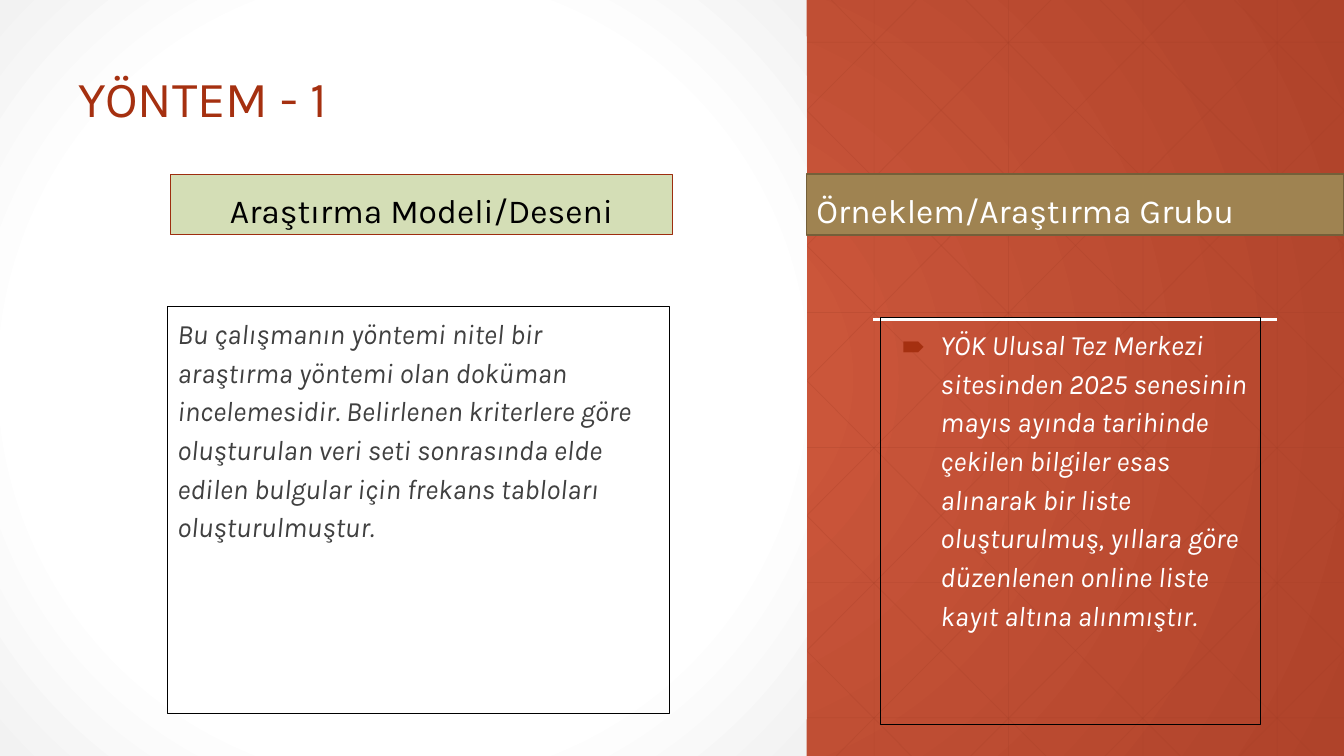
from dataclasses import dataclass

from lxml.etree import SubElement
from pptx import Presentation
from pptx.dml.color import RGBColor
from pptx.enum.shapes import MSO_CONNECTOR as Connector, MSO_SHAPE as Shape
from pptx.enum.text import MSO_ANCHOR as Anchor, MSO_AUTO_SIZE as AutoSize, PP_ALIGN as Align
from pptx.oxml import parse_xml
from pptx.oxml.ns import nsdecls, qn
from pptx.util import Inches, Pt

WIDTH, HEIGHT = 13.33, 7.5
PANEL_WIDTH = 8
GRID_STEP = 1.333
DIAGONAL_RUN = 7.46


@dataclass(frozen=True)
class Theme:
    font: str = "Karla"
    bullet_font: str = "Noto Sans Symbols"
    title_size: float = 36
    heading_size: float = 24
    body_size: float = 20
    accent: str = "A53010"
    grid: str = "A43F27"
    white: str = "FFFFFF"
    black: str = "000000"
    body: str = "404040"
    green: str = "D4DEB6"
    green_edge: str = "9D2D0F"
    olive: str = "9F8351"
    olive_edge: str = "745F39"
    backdrop: tuple = ((0, "D15A3E"), (100, "AF432A"))
    panel: tuple = ((0, "FFFFFF"), (69, "FFFFFF"), (100, "F2F2F2"))


THEME = Theme()


@dataclass(frozen=True)
class Card:
    text: str
    box: tuple[float, float, float, float]
    color: str
    edge: str = THEME.black
    edge_width: float = 0.75
    fill: str | None = None
    size: float = THEME.body_size
    align: Align = Align.LEFT
    anchor: Anchor = Anchor.TOP
    italic: bool = False
    spacing: float = 1.0
    after: float = 0
    bullet: str | None = None


CARDS = (
    Card("Araştırma Modeli/Deseni", (1.69, 1.73, 4.98, 0.6), THEME.black,
         edge=THEME.green_edge, fill=THEME.green, size=THEME.heading_size,
         align=Align.CENTER, anchor=Anchor.BOTTOM),
    Card("Örneklem/Araştırma Grubu", (8, 1.73, 5.33, 0.6), THEME.white,
         edge=THEME.olive_edge, edge_width=1.25, fill=THEME.olive,
         size=THEME.heading_size, anchor=Anchor.BOTTOM),
    Card("YÖK Ulusal Tez Merkezi sitesinden 2025 senesinin mayıs ayında tarihinde "
         "çekilen bilgiler esas alınarak bir liste oluşturulmuş, yıllara göre "
         "düzenlenen online liste kayıt altına alınmıştır.",
         (8.73, 3.15, 3.77, 4.04), THEME.white, italic=True, spacing=1.15, bullet="🠶"),
    Card("Bu çalışmanın yöntemi nitel bir araştırma yöntemi olan doküman "
         "incelemesidir. Belirlenen kriterlere göre oluşturulan veri seti sonrasında "
         "elde edilen bulgular için frekans tabloları oluşturulmuştur.",
         (1.66, 3.04, 4.98, 4.04), THEME.body, italic=True, spacing=1.15, after=12),
)


def rgb(color: str) -> RGBColor:
    return RGBColor.from_string(color)


def apply_radial(properties, stops: tuple) -> None:
    marks = "".join(f'<a:gs pos="{position * 1000}"><a:srgbClr val="{color}"/></a:gs>'
                    for position, color in stops)
    gradient = parse_xml(
        f'<a:gradFill {nsdecls("a")} rotWithShape="1"><a:gsLst>{marks}</a:gsLst>'
        '<a:path path="circle"><a:fillToRect l="50000" t="50000" r="50000" b="50000"/>'
        '</a:path></a:gradFill>')
    solid = properties.find(qn("a:solidFill"))
    properties.replace(solid, gradient)


def add_line(slide, start: tuple, end: tuple, color: str, width: float,
             opacity: int = 100) -> None:
    line = slide.shapes.add_connector(
        Connector.STRAIGHT, *(Inches(value) for value in (*start, *end)))
    line.line.color.rgb = rgb(color)
    line.line.width = Pt(width)
    properties = line._element.spPr
    if opacity < 100:
        SubElement(properties.find(".//" + qn("a:srgbClr")), qn("a:alpha"),
                   val=str(opacity * 1000))
    SubElement(properties, qn("a:effectLst"))


def add_rectangle(slide, box: tuple):
    rectangle = slide.shapes.add_shape(Shape.RECTANGLE, *(Inches(value) for value in box))
    rectangle.shadow.inherit = False
    return rectangle


def write_text(shape, text: str, *, size: float, color: str, align: Align = Align.LEFT,
               anchor: Anchor = Anchor.TOP, italic: bool = False, spacing: float = 1.0,
               after: float = 0, bullet: str | None = None) -> None:
    frame = shape.text_frame
    frame.word_wrap = True
    frame.vertical_anchor = anchor
    frame.margin_left = frame.margin_right = Inches(0.1)
    frame.margin_top = frame.margin_bottom = Inches(0.05)
    frame.text = text
    paragraph = frame.paragraphs[0]
    paragraph.alignment = align
    paragraph.line_spacing = spacing
    paragraph.space_before = Pt(0)
    paragraph.space_after = Pt(after)
    if bullet:
        properties = paragraph._p.get_or_add_pPr()
        properties.set("marL", str(Inches(0.5)))
        properties.set("indent", str(Inches(-0.39)))
        bullet_color = SubElement(properties, qn("a:buClr"))
        SubElement(bullet_color, qn("a:srgbClr"), val=THEME.accent)
        SubElement(properties, qn("a:buFont"), typeface=THEME.bullet_font)
        SubElement(properties, qn("a:buChar"), char=bullet)
    font = paragraph.runs[0].font
    font.name = THEME.font
    font.size = Pt(size)
    font.italic = italic
    font.color.rgb = rgb(color)


def add_grid(slide) -> None:
    verticals = [8.67 + GRID_STEP * i for i in range(4)]
    horizontals = [0.42 + 1.34 * i for i in range(6)]
    segments = [((x, 0), (x, HEIGHT)) for x in verticals]
    segments += [((0, y), (WIDTH, y)) for y in horizontals]
    for first, falling in ((1.58, True), (1.63, False)):
        for i in range(9):
            x = first + GRID_STEP * i
            run = min(DIAGONAL_RUN, WIDTH - x)
            rise = HEIGHT * run / DIAGONAL_RUN
            start_y, end_y = (0, rise) if falling else (HEIGHT, HEIGHT - rise)
            segments.append(((x, start_y), (x + run, end_y)))
    for start, end in segments:
        add_line(slide, start, end, THEME.grid, 0.5, opacity=25)


def add_panel(slide) -> None:
    panel = add_rectangle(slide, (0, 0, PANEL_WIDTH, HEIGHT))
    panel.fill.solid()
    panel.line.fill.background()
    apply_radial(panel._element.spPr, THEME.panel)


def place_title(slide) -> None:
    title = slide.shapes.title
    title.left, title.top = Inches(0.68), Inches(0.62)
    title.width, title.height = Inches(6.16), Inches(0.7)
    write_text(title, "YÖNTEM - 1", size=THEME.title_size, color=THEME.accent)
    title.text_frame.auto_size = AutoSize.SHAPE_TO_FIT_TEXT
    slide.shapes._spTree.append(title._element)


def add_card(slide, card: Card) -> None:
    rectangle = add_rectangle(slide, card.box)
    if card.fill:
        rectangle.fill.solid()
        rectangle.fill.fore_color.rgb = rgb(card.fill)
    else:
        rectangle.fill.background()
    rectangle.line.color.rgb = rgb(card.edge)
    rectangle.line.width = Pt(card.edge_width)
    write_text(rectangle, card.text, size=card.size, color=card.color, align=card.align,
               anchor=card.anchor, italic=card.italic, spacing=card.spacing,
               after=card.after, bullet=card.bullet)


def main() -> None:
    deck = Presentation()
    deck.slide_width, deck.slide_height = Inches(WIDTH), Inches(HEIGHT)
    slide = deck.slides.add_slide(deck.slide_layouts[5])
    slide.background.fill.solid()
    apply_radial(slide._element.cSld.find(".//" + qn("p:bgPr")), THEME.backdrop)
    add_grid(slide)
    add_panel(slide)
    add_line(slide, (8.66, 3.17), (12.67, 3.17), THEME.white, 1.5)
    place_title(slide)
    for card in CARDS:
        add_card(slide, card)
    deck.save("out.pptx")


if __name__ == "__main__":
    main()
